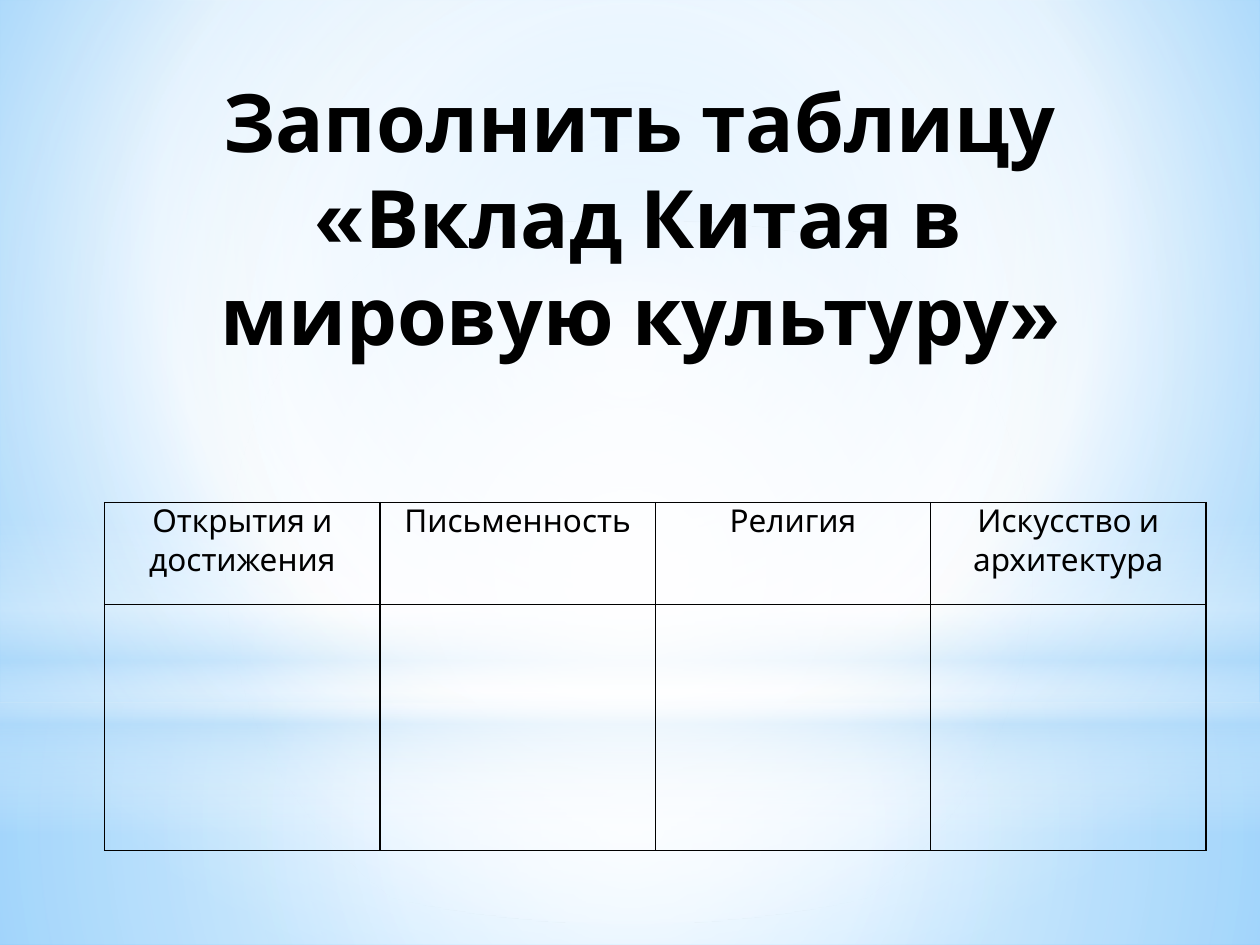
"""Build a slide with a blank table on China's gift to world culture."""
from lxml import etree
from pptx import Presentation
from pptx import util as u
from pptx.dml.color import RGBColor
from pptx.enum import shapes, text
from pptx.oxml.ns import qn

BLACK = RGBColor(0x00, 0x00, 0x00)
WHITE = RGBColor(0xFF, 0xFF, 0xFF)
PALE = RGBColor(0xB4, 0xDC, 0xFA)
SKY = RGBColor(0x9E, 0xD5, 0xFF)
BLUE = RGBColor(0x5B, 0xB9, 0xFF)

WIDE, HIGH = 25.4, 19.05
SPLIT = 14.17
MID = (50, 50, 50, 50)
HEADS = ["Открытия и достижения", "Письменность", "Религия", "Искусство и архитектура"]


def write(frame, words, size=18, bold=False, font="Cabin", color=BLACK):
    para = frame.paragraphs[0]
    para.text = words
    para.alignment = text.PP_ALIGN.CENTER
    for run in para.runs:
        run.font.name, run.font.size = font, u.Pt(size)
        run.font.bold, run.font.color.rgb = bold, color


def blend(fill, root, stops, focus=None, angle=90):
    fill.gradient()
    grad = next(root.iter(qn("a:gradFill")))
    for child in list(grad):
        grad.remove(child)
    row = etree.SubElement(grad, qn("a:gsLst"))
    for spot, color, solid in stops:
        stop = etree.SubElement(row, qn("a:gs"), pos=str(spot * 1000))
        tint = etree.SubElement(stop, qn("a:srgbClr"), val=str(color))
        if solid < 100:
            etree.SubElement(tint, qn("a:alpha"), val=str(solid * 1000))
    if focus:
        kind = etree.SubElement(grad, qn("a:path"), {"path": "circle"})
        sides = {side: str(part * 1000) for side, part in zip("ltrb", focus)}
        etree.SubElement(kind, qn("a:fillToRect"), sides)
    else:
        etree.SubElement(grad, qn("a:lin"), ang=str(angle * 60000), scaled="0")


class Page:
    def __init__(self, slide, line=BLACK, width=1):
        self.slide, self.line, self.width = slide, line, width

    def back(self, stops, focus):
        back = self.slide.background
        blend(back.fill, self.slide.element, stops, focus)

    def glow(self, top, height, stops, focus=None, kind=shapes.MSO_SHAPE.RECTANGLE):
        shape = self.slide.shapes.add_shape(kind, 0, u.Cm(top), u.Cm(WIDE), u.Cm(height))
        shape.shadow.inherit = False
        shape.line.fill.background()
        blend(shape.fill, shape.element, stops, focus)

    def title(self, words, left, top, width, height, size):
        box = self.slide.shapes.add_textbox(*map(u.Cm, (left, top, width, height)))
        box.text_frame.word_wrap = True
        write(box.text_frame, words, size=size, bold=True)

    def frame(self, cell):
        cell.fill.background()
        props = cell._tc.get_or_add_tcPr()
        for spot, side in enumerate(("lnL", "lnR", "lnT", "lnB")):
            edge = etree.Element(qn("a:" + side), w=str(u.Pt(self.width)))
            paint = etree.SubElement(edge, qn("a:solidFill"))
            etree.SubElement(paint, qn("a:srgbClr"), val=str(self.line))
            props.insert(spot, edge)

    def table(self, heads, left, top, width, rows):
        size = map(u.Cm, (left, top, width, sum(rows)))
        table = self.slide.shapes.add_table(len(rows), len(heads), *size).table
        table.first_row = table.horz_banding = False
        for row, height in zip(table.rows, rows):
            row.height = u.Cm(height)
        for col in table.columns:
            col.width = u.Cm(width / len(heads))
        for cell in table.iter_cells():
            cell.margin_left = cell.margin_right = u.Cm(0.18)
            cell.margin_top = cell.margin_bottom = 0
            self.frame(cell)
        for cell, words in zip(table.rows[0].cells, heads):
            write(cell.text_frame, words)


def main():
    deck = Presentation()
    deck.slide_width, deck.slide_height = u.Cm(WIDE), u.Cm(HIGH)
    page = Page(deck.slides.add_slide(deck.slide_layouts[6]))
    page.back([(0, SKY, 100), (60, WHITE, 100), (100, BLUE, 100)], (20, 10, 20, 60))
    page.glow(SPLIT, HIGH - SPLIT, [(0, WHITE, 91), (37, WHITE, 76), (100, PALE, 79)], MID)
    page.glow(0, SPLIT, [(0, WHITE, 89), (48, WHITE, 62), (100, PALE, 79)], MID)
    page.glow(10.46, 6.35, [(0, WHITE, 0), (29, WHITE, 30), (45, PALE, 40),
                            (55, WHITE, 26), (65, PALE, 60), (100, WHITE, 0)])
    page.glow(4.45, SPLIT, [(0, WHITE, 100), (56, WHITE, 0)], MID, shapes.MSO_SHAPE.OVAL)
    page.title("Заполнить таблицу\v«Вклад Китая в мировую культуру»", 2.49, 1.32, 20.8, 3.18, 46)
    page.table(HEADS, 2.11, 10.13, 22.2, [2.06, 4.95])
    deck.save("out.pptx")


if __name__ == "__main__":
    main()
